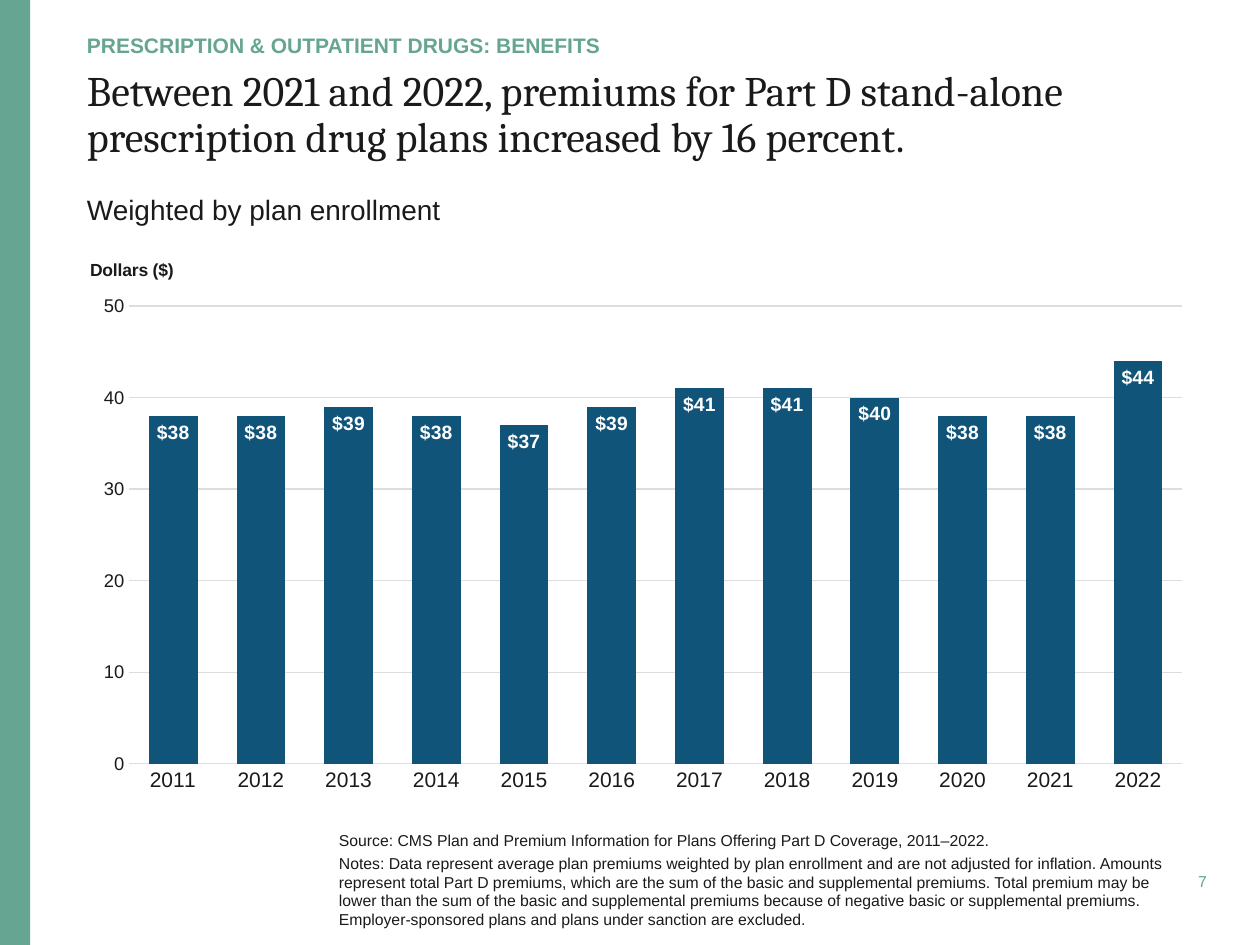
from lxml import etree
from pptx import Presentation
from pptx.chart.data import CategoryChartData
from pptx.dml.color import RGBColor
from pptx.enum.chart import XL_CHART_TYPE, XL_LABEL_POSITION, XL_TICK_MARK
from pptx.enum.shapes import MSO_SHAPE
from pptx.enum.text import MSO_ANCHOR, PP_ALIGN
from pptx.oxml.ns import qn
from pptx.util import Pt

GREEN = RGBColor(0x65, 0xA5, 0x91)
INK = RGBColor(0x1A, 0x1A, 0x1A)
BLUE = RGBColor(0x11, 0x54, 0x79)
GRAY = RGBColor(0xDD, 0xDD, 0xDD)
WHITE = RGBColor(0xFF, 0xFF, 0xFF)
BODY_FONT = "Arial"
TITLE_FONT = "Cambria"

COLUMN = XL_CHART_TYPE.COLUMN_CLUSTERED
INSIDE_END = XL_LABEL_POSITION.INSIDE_END
NO_TICK = XL_TICK_MARK.NONE
RECTANGLE = MSO_SHAPE.RECTANGLE
TOP, MIDDLE, BOTTOM = MSO_ANCHOR.TOP, MSO_ANCHOR.MIDDLE, MSO_ANCHOR.BOTTOM
LEFT, RIGHT = PP_ALIGN.LEFT, PP_ALIGN.RIGHT

MARGIN = 49.7
CONTENT_WIDTH = 637.2
YEARS = [str(year) for year in range(2011, 2023)]
PREMIUMS = [38, 38, 39, 38, 37, 39, 41, 41, 40, 38, 38, 44]
SOURCE = "Source: CMS Plan and Premium Information for Plans Offering Part D Coverage, 2011–2022."
NOTES = (
    "Notes: Data represent average plan premiums weighted by plan enrollment and are not adjusted "
    "for inflation. Amounts represent total Part D premiums, which are the sum of the basic and "
    "supplemental premiums. Total premium may be lower than the sum of the basic and supplemental "
    "premiums because of negative basic or supplemental premiums. Employer-sponsored plans and "
    "plans under sanction are excluded."
)


class SlideBuilder:
    def __init__(self, slide):
        self.slide = slide

    def style_font(self, font, size, color=INK, bold=False, name=BODY_FONT):
        font.size = Pt(size)
        font.name = name
        font.bold = bold
        font.color.rgb = color

    def rectangle(self, left, top, width, height, color):
        shape = self.slide.shapes.add_shape(RECTANGLE, Pt(left), Pt(top), Pt(width), Pt(height))
        shape.shadow.inherit = False
        shape.fill.solid()
        shape.fill.fore_color.rgb = color
        shape.line.fill.background()

    def text(self, left, top, width, height, paragraphs, size, color=INK, bold=False,
             name=BODY_FONT, anchor=TOP, align=LEFT, line_spacing=1.0, gap=0):
        shape = self.slide.shapes.add_textbox(Pt(left), Pt(top), Pt(width), Pt(height))
        frame = shape.text_frame
        frame.word_wrap = True
        frame.vertical_anchor = anchor
        frame.margin_left = frame.margin_right = frame.margin_top = frame.margin_bottom = 0
        for index, content in enumerate(paragraphs):
            paragraph = frame.add_paragraph() if index else frame.paragraphs[0]
            paragraph.alignment = align
            paragraph.line_spacing = line_spacing
            if index:
                paragraph.space_before = Pt(gap)
            run = paragraph.add_run()
            run.text = content
            self.style_font(run.font, size, color, bold, name)

    def place(self, element, position, **settings):
        for existing in element.findall(qn("c:layout")):
            element.remove(existing)
        layout = etree.Element(qn("c:layout"))
        manual = etree.SubElement(layout, qn("c:manualLayout"))
        for tag, value in settings.items():
            etree.SubElement(manual, qn("c:" + tag)).set("val", str(value))
        element.insert(position, layout)

    def style_line(self, line):
        line.color.rgb = GRAY
        line.width = Pt(0.75)

    def column_chart(self, left, top, width, height, categories, values, axis_title):
        data = CategoryChartData()
        data.categories = categories
        data.add_series("Series 1", values)
        chart = self.slide.shapes.add_chart(
            COLUMN, Pt(left), Pt(top), Pt(width), Pt(height), data).chart
        chart.has_legend = False
        chart.has_title = False
        self.style_font(chart.font, 10)

        plot = chart.plots[0]
        plot.gap_width = 80
        plot.overlap = 100
        plot.vary_by_categories = False
        series = plot.series[0]
        series.format.fill.solid()
        series.format.fill.fore_color.rgb = BLUE
        labels = series.data_labels
        labels.show_value = True
        labels.position = INSIDE_END
        labels.number_format = '"$"#,##0'
        labels.number_format_is_linked = False
        self.style_font(labels.font, 11, WHITE, True)

        for axis, size in ((chart.category_axis, 12), (chart.value_axis, 10.5)):
            axis.major_tick_mark = axis.minor_tick_mark = NO_TICK
            self.style_font(axis.tick_labels.font, size)
        self.style_line(chart.category_axis.format.line)

        value_axis = chart.value_axis
        value_axis.minimum_scale = 0
        value_axis.maximum_scale = 50
        value_axis.major_unit = 10
        value_axis.tick_labels.number_format = "#,##0"
        value_axis.tick_labels.number_format_is_linked = False
        value_axis.format.line.fill.background()
        self.style_line(value_axis.major_gridlines.format.line)

        run = value_axis.axis_title.text_frame.paragraphs[0].add_run()
        run.text = axis_title
        self.style_font(run.font, 10, INK, True)
        title = value_axis._element.find(qn("c:title"))
        body = title.find(".//" + qn("a:bodyPr"))
        body.set("rot", "0")
        body.set("vert", "horz")
        self.place(title, 1, xMode="edge", yMode="edge", x=0, y=0.03)
        plot_area = chart._chartSpace.find(".//" + qn("c:plotArea"))
        self.place(plot_area, 0, layoutTarget="inner", xMode="edge", yMode="edge",
                   x=0.038, y=0.119, w=0.944, h=0.802)


def main():
    presentation = Presentation()
    presentation.slide_width = Pt(720)
    presentation.slide_height = Pt(540)
    builder = SlideBuilder(presentation.slides.add_slide(presentation.slide_layouts[6]))

    builder.rectangle(0, 0, 17.3, 540, GREEN)
    builder.text(667.4, 495.4, 22.3, 15.8, ["7"], 9, GREEN, anchor=MIDDLE, align=RIGHT)
    builder.text(193.7, 472.3, 474.5, 61.2, [SOURCE, NOTES], 9, anchor=MIDDLE, gap=1.8)
    builder.text(MARGIN, 40.3, CONTENT_WIDTH, 57.6,
                 ["Between 2021 and 2022, premiums for Part D stand-alone "
                  "prescription drug plans increased by 16 percent."],
                 24, name=TITLE_FONT, line_spacing=0.9)
    builder.text(MARGIN, 13.7, 623.5, 19.4, ["PRESCRIPTION & OUTPATIENT DRUGS: BENEFITS"],
                 12, GREEN, True, anchor=BOTTOM)
    builder.column_chart(MARGIN, 136.1, CONTENT_WIDTH, 326.2, YEARS, PREMIUMS, "Dollars ($)")
    builder.text(MARGIN, 110.2, 514.8, 19.4, ["Weighted by plan enrollment"], 16)
    presentation.save("out.pptx")


if __name__ == "__main__":
    main()
